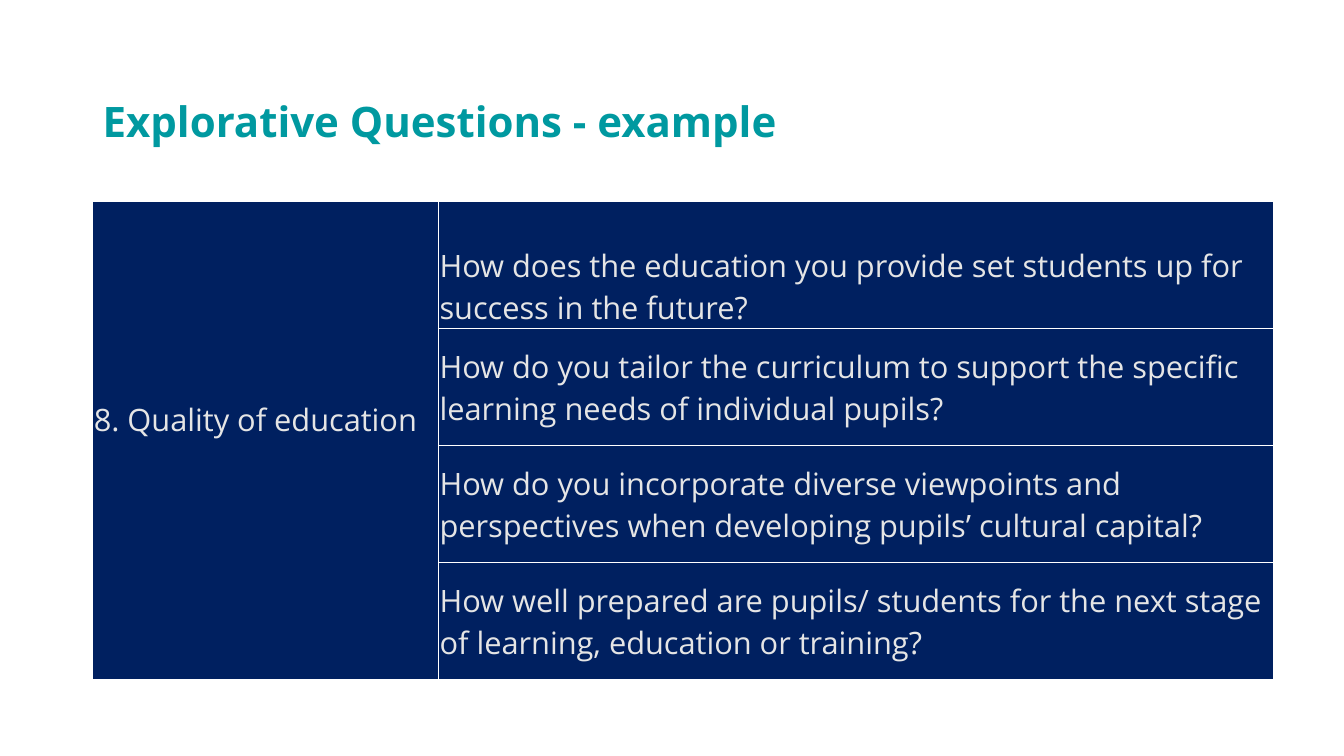
from lxml.etree import SubElement
from pptx import Presentation
from pptx.dml.color import RGBColor
from pptx.enum.text import MSO_ANCHOR as Anchor
from pptx.oxml.ns import qn
from pptx.util import Pt

PX = 9144
TEAL = RGBColor(0x00, 0x99, 0xA0)
NAVY = RGBColor(0x00, 0x20, 0x60)
PALE = RGBColor(0xE5, 0xE5, 0xE5)
WHITE = RGBColor(0xFF, 0xFF, 0xFF)
FONT = "Open Sans"

THEME = "8. Quality of education"
QUESTIONS = [
    "How does the education you provide set students up for success in the future?",
    "How do you tailor the curriculum to support the specific learning needs of individual pupils?",
    "How do you incorporate diverse viewpoints and perspectives when developing pupils’ cultural capital?",
    "How well prepared are pupils/ students for the next stage of learning, education or training?",
]
COLUMN_WIDTHS = [343, 828]
ROW_HEIGHTS = [126, 116, 116, 116]
TEXT_LINE = 42


def px(length):
    return length * PX


def add_text(paragraph, text, size, color, bold=False):
    run = paragraph.add_run()
    run.text = text
    run.font.name = FONT
    run.font.size = Pt(size)
    run.font.bold = bold
    run.font.color.rgb = color


def add_title(slide, left, top, width, height):
    title = slide.shapes.add_textbox(px(left), px(top), px(width), px(height)).text_frame
    title.word_wrap = True
    title.vertical_anchor = Anchor.MIDDLE
    heading = title.paragraphs[0]
    heading.line_spacing = 0.9
    add_text(heading, "Explorative Questions - example", 30, TEAL, True)


def style_cell(cell):
    cell.margin_left = cell.margin_right = cell.margin_top = px(1)
    cell.margin_bottom = 0
    cell.vertical_anchor = Anchor.MIDDLE
    properties = cell._tc.get_or_add_tcPr()
    for side in ("a:lnL", "a:lnR", "a:lnT", "a:lnB"):
        border = SubElement(properties, qn(side), w=str(Pt(1)))
        fill = SubElement(border, qn("a:solidFill"))
        SubElement(fill, qn("a:srgbClr"), val=str(WHITE))
    cell.fill.solid()
    cell.fill.fore_color.rgb = NAVY


def add_questions(slide, left, top):
    table = slide.shapes.add_table(
        len(QUESTIONS), len(COLUMN_WIDTHS), px(left), px(top),
        px(sum(COLUMN_WIDTHS)), px(sum(ROW_HEIGHTS)),
    ).table
    table.first_row = table.horz_banding = False
    for column, width in zip(table.columns, COLUMN_WIDTHS):
        column.width = px(width)
    for row, height in zip(table.rows, ROW_HEIGHTS):
        row.height = px(height)
    for cell in table.iter_cells():
        style_cell(cell)

    theme_cell = table.cell(0, 0)
    theme_cell.merge(table.cell(len(QUESTIONS) - 1, 0))
    theme_cell.margin_bottom = px(TEXT_LINE)
    add_text(theme_cell.text_frame.paragraphs[0], THEME, 22, PALE)
    for index, question in enumerate(QUESTIONS):
        add_text(table.cell(index, 1).text_frame.paragraphs[0], question, 22, PALE)
    table.cell(0, 1).vertical_anchor = Anchor.BOTTOM


def main():
    deck = Presentation()
    deck.slide_width, deck.slide_height = px(1333), px(750)
    slide = deck.slides.add_slide(deck.slide_layouts[6])
    add_title(slide, 92, 61, 1150, 124)
    add_questions(slide, 92, 200)
    deck.save("out.pptx")


if __name__ == "__main__":
    main()
